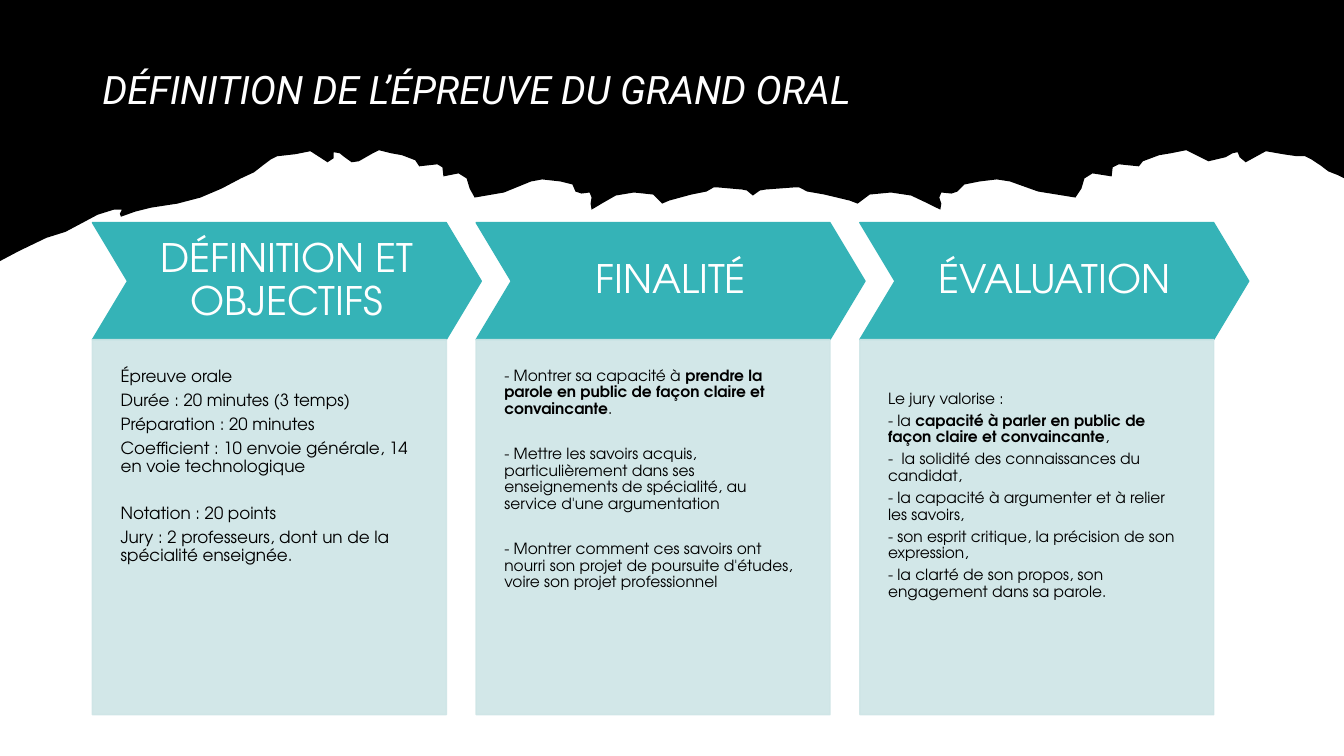
from dataclasses import dataclass

from lxml import etree
from pptx import Presentation
from pptx.dml.color import RGBColor
from pptx.enum import shapes as kinds, text as txt
from pptx.oxml.ns import qn
from pptx.util import Cm, Pt


@dataclass(frozen=True)
class Theme:
    black: str = "000000"
    white: str = "FFFFFF"
    teal: str = "35B3B7"
    mist: str = "CEE5E6"
    title_font: str = "Roboto"
    body_font: str = "TeX Gyre Adventor"
    heading_size: int = 28
    large_size: int = 12
    small_size: int = 11


@dataclass(frozen=True)
class Box:
    left: float
    top: float
    width: float
    height: float

    def lengths(self):
        return [Cm(v) for v in (self.left, self.top, self.width, self.height)]


THEME = Theme()
PAGE = Box(0, 0, 33.87, 19.05)
TITLE_BOX = Box(2.33, 1.02, 29.21, 2.59)
FIRST_COLUMN = Box(2.33, 5.61, 9.8, 12.4)
COLUMN_PITCH = 9.67
HEADING_HEIGHT = 2.95
CARD_WIDTH = 8.92
GAP = 16.5  # points between groups of paragraphs

# Lower edge of the torn band, left to right, in hundredths of an inch
TORN_EDGE = [
    (0, 259), (19, 249), (46, 236), (65, 230), (82, 221), (97, 213), (113, 208),
    (121, 208), (119, 212), (120, 215), (134, 210), (150, 206), (176, 202),
    (199, 196), (220, 187), (239, 177), (252, 171), (261, 164), (269, 158),
    (275, 155), (293, 153), (308, 150), (325, 161), (331, 157), (331, 151),
    (337, 152), (342, 156), (349, 161), (356, 160), (370, 152), (376, 149),
    (388, 152), (399, 154), (412, 159), (416, 165), (434, 163), (439, 166),
    (440, 175), (455, 172), (463, 177), (466, 187), (471, 196), (500, 191),
    (527, 180), (538, 178), (556, 180), (568, 183), (571, 190), (577, 192),
    (585, 191), (587, 196), (586, 202), (587, 208), (597, 202), (611, 194),
    (629, 191), (648, 193), (654, 199), (657, 202), (664, 199), (686, 193),
    (701, 190), (708, 186), (713, 186), (736, 188), (741, 189), (747, 194),
    (754, 189), (760, 188), (787, 186), (793, 186), (801, 190), (818, 193),
    (843, 199), (851, 202), (855, 199), (863, 193), (884, 191), (904, 194),
    (921, 202), (933, 208), (934, 202), (932, 196), (934, 191), (944, 192),
    (950, 190), (957, 183), (972, 180), (989, 178), (1002, 180), (1030, 190),
    (1067, 196), (1073, 187), (1076, 177), (1084, 172), (1103, 175),
    (1104, 166), (1110, 163), (1130, 165), (1134, 160), (1150, 154),
    (1162, 152), (1177, 149), (1183, 152), (1199, 160), (1216, 156),
    (1223, 152), (1228, 151), (1230, 156), (1236, 161), (1256, 150),
    (1273, 153), (1287, 155), (1295, 155), (1301, 158), (1310, 164),
    (1318, 170), (1328, 174), (1334, 177),
]

# Each paragraph is a list of (words, is bold) runs with the space before it
COLUMNS = [
    dict(heading="DÉFINITION ET OBJECTIFS", size=THEME.large_size, paragraphs=[
        ([("Épreuve orale", False)], 0),
        ([("Durée : 20 minutes (3 temps)", False)], 0),
        ([("Préparation : 20 minutes", False)], 0),
        ([("Coefficient : 10 envoie générale, 14 en voie technologique", False)], 0),
        ([("Notation : 20 points", False)], GAP),
        ([("Jury : 2 professeurs, dont un de la spécialité enseignée.", False)], 0),
    ]),
    dict(heading="FINALITÉ", size=THEME.small_size, paragraphs=[
        ([("- Montrer sa capacité à ", False),
          ("prendre la parole en public de façon claire et convaincante", True),
          (".", False)], 0),
        ([("- Mettre les savoirs acquis, particulièrement dans ses enseignements "
           "de spécialité, au service d'une argumentation", False)], GAP),
        ([("- Montrer comment ces savoirs ont nourri son projet de poursuite "
           "d'études, voire son projet professionnel", False)], GAP),
    ]),
    dict(heading="ÉVALUATION", size=THEME.small_size, drop=0.58, paragraphs=[
        ([("Le jury valorise :", False)], 0),
        ([("- la ", False),
          ("capacité à parler en public de façon claire et convaincante", True),
          (",", False)], 0),
        ([("-  la solidité des connaissances du candidat,", False)], 0),
        ([("- la capacité à argumenter et à relier les savoirs,", False)], 0),
        ([("- son esprit critique, la précision de son expression,", False)], 0),
        ([("- la clarté de son propos, son engagement dans sa parole.", False)], 0),
    ]),
]


def write(shape, paragraphs, *, size, color, font=THEME.body_font, italic=False,
          align=txt.PP_ALIGN.LEFT, anchor=txt.MSO_ANCHOR.TOP,
          insets=(0.25, 0.13, 0.25, 0.13), after=0.35):
    """Fill a shape with paragraphs; insets are left, top, right, bottom in cm."""
    frame = shape.text_frame
    frame.word_wrap = True
    frame.auto_size = txt.MSO_AUTO_SIZE.NONE
    frame.vertical_anchor = anchor
    (frame.margin_left, frame.margin_top,
     frame.margin_right, frame.margin_bottom) = [Cm(v) for v in insets]
    for index, (runs, before) in enumerate(paragraphs):
        paragraph = frame.add_paragraph() if index else frame.paragraphs[0]
        paragraph.alignment = align
        paragraph.line_spacing = 0.9
        paragraph.space_before = Pt(before)
        paragraph.space_after = Pt(size * after)
        for words, bold in runs:
            run = paragraph.add_run()
            run.text = words
            run.font.name = font
            run.font.size = Pt(size)
            run.font.bold = bold
            run.font.italic = italic
            run.font.color.rgb = RGBColor.from_string(color)


def paint(shape, color, opacity=100):
    """Give fill and outline one colour, with opacity in percent."""
    shape.shadow.inherit = False
    shape.line.width = Pt(1)
    for fill in (shape.fill, shape.line.fill):
        fill.solid()
        fill.fore_color.rgb = RGBColor.from_string(color)
    if opacity < 100:
        for swatch in shape.element.spPr.iter(qn("a:srgbClr")):
            etree.SubElement(swatch, qn("a:alpha"), val=str(opacity * 1000))


def add_torn_band(slide, box):
    left, top, width, _ = box.lengths()
    unit = Cm(0.0254)
    builder = slide.shapes.build_freeform(left, top)
    edge = [(left + x * unit, top + y * unit) for x, y in TORN_EDGE]
    builder.add_line_segments(edge + [(left + width, top)])
    band = builder.convert_to_shape()
    paint(band, THEME.black)
    band.line.fill.background()
    slide.shapes.title.element.addprevious(band.element)


def add_title(slide, box):
    title = slide.shapes.title
    title.left, title.top, title.width, title.height = box.lengths()
    write(title, [([("DÉFINITION DE L’ÉPREUVE DU GRAND ORAL", False)], 0)],
          size=THEME.heading_size, color=THEME.white, font=THEME.title_font,
          italic=True, anchor=txt.MSO_ANCHOR.MIDDLE, after=0)


def add_column(slide, box, heading, paragraphs, size, drop=0):
    """Place a chevron heading over its card; drop lowers the card text in cm."""
    chevron = slide.shapes.add_shape(
        kinds.MSO_SHAPE.CHEVRON,
        *Box(box.left, box.top, box.width, HEADING_HEIGHT).lengths())
    chevron.adjustments[0] = 0.3
    paint(chevron, THEME.teal)
    write(chevron, [([(heading, False)], 0)], size=THEME.heading_size,
          color=THEME.white, align=txt.PP_ALIGN.CENTER,
          anchor=txt.MSO_ANCHOR.MIDDLE, insets=(0.36,) * 4)

    card = slide.shapes.add_shape(
        kinds.MSO_SHAPE.RECTANGLE,
        *Box(box.left, box.top + HEADING_HEIGHT, CARD_WIDTH,
             box.height - HEADING_HEIGHT).lengths())
    paint(card, THEME.mist, opacity=90)
    write(card, paragraphs, size=size, color=THEME.black,
          insets=(0.71, 0.71 + drop, 0.71, 1.42))


def main():
    deck = Presentation()
    deck.slide_width, deck.slide_height = Cm(PAGE.width), Cm(PAGE.height)
    slide = deck.slides.add_slide(deck.slide_layouts.get_by_name("Title Only"))
    add_torn_band(slide, PAGE)
    add_title(slide, TITLE_BOX)
    for index, column in enumerate(COLUMNS):
        box = Box(FIRST_COLUMN.left + index * COLUMN_PITCH, FIRST_COLUMN.top,
                  FIRST_COLUMN.width, FIRST_COLUMN.height)
        add_column(slide, box, **column)
    deck.save("out.pptx")


if __name__ == "__main__":
    main()
